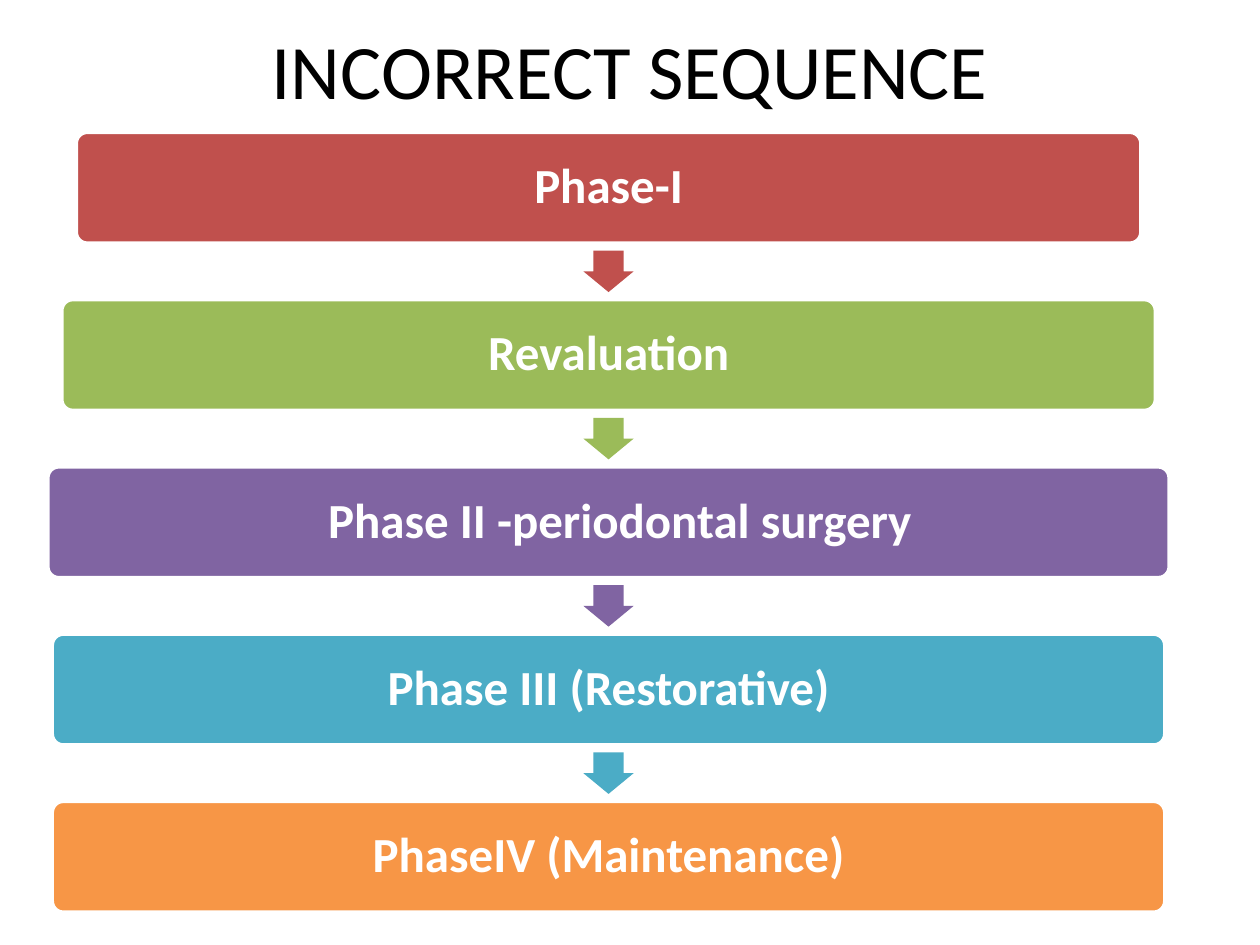
from pptx import Presentation, util as u
from pptx.dml.color import RGBColor
from pptx.enum import shapes, text

COLOURS = {"ink": "000000", "paper": "FFFFFF", "red": "C0504D", "green": "9BBB59",
           "purple": "8064A2", "teal": "4BACC6", "orange": "F79646"}
PHASES = [("Phase-I", "red", 8.45, 0),
          ("Revaluation", "green", 8.68, 0),
          ("Phase II -periodontal surgery", "purple", 8.9, 0.18),
          ("Phase III (Restorative)", "teal", 8.83, 0),
          ("PhaseIV (Maintenance)", "orange", 8.83, 0)]
AXIS, FIRST_ROW, LAST_ROW = 4.83, 1.05, 6.36
ROW = (LAST_ROW - FIRST_ROW) / (len(PHASES) - 1)
BAR_HEIGHT, ARROW_WIDTH, ARROW_HEIGHT = 0.88, 0.4, 0.33


class SequenceSlide:
    """Holds the style and the current slide, and draws its title, bars and arrows."""

    def __init__(self, deck):
        self.slide = deck.slides.add_slide(deck.slide_layouts[5])
        self.title_format = {"name": "Calibri", "size": u.Pt(44), "bold": False}
        self.bar_format = {"name": "Calibri", "size": u.Pt(28), "bold": True}

    def colour(self, name):
        return RGBColor.from_string(COLOURS[name])

    def apply(self, target, values):
        for key, value in values.items():
            setattr(target, key, value)

    def label(self, frame, words, font, ink, inset=0.1, indent=0, spacing=1):
        self.apply(frame, {"word_wrap": True, "vertical_anchor": text.MSO_ANCHOR.MIDDLE,
                           "margin_left": u.Inches(inset + indent),
                           "margin_right": u.Inches(inset),
                           "margin_top": u.Inches(inset), "margin_bottom": u.Inches(inset)})
        line = frame.paragraphs[0]
        line.text = words
        self.apply(line, {"alignment": text.PP_ALIGN.CENTER, "line_spacing": spacing})
        self.apply(line.font, font)
        line.font.color.rgb = self.colour(ink)

    def title(self, words):
        heading = self.slide.shapes.title
        self.apply(heading, {"left": u.Inches(0.5), "top": u.Inches(-0.08),
                             "width": u.Inches(9), "height": u.Inches(1.25)})
        self.label(heading.text_frame, words, self.title_format, "ink", inset=0.05)

    def centred(self, kind, top, width, height, fill, adjustments):
        block = self.slide.shapes.add_shape(
            kind, u.Inches(AXIS - width / 2), u.Inches(top), u.Inches(width), u.Inches(height))
        for index, value in enumerate(adjustments):
            block.adjustments[index] = value
        block.shadow.inherit = False
        block.fill.solid()
        block.fill.fore_color.rgb = self.colour(fill)
        return block

    def bar(self, row, words, fill, width, indent):
        phase = self.centred(shapes.MSO_SHAPE.ROUNDED_RECTANGLE, FIRST_ROW + row * ROW,
                             width, BAR_HEIGHT, fill, [0.1])
        phase.line.color.rgb = self.colour("paper")
        phase.line.width = u.Pt(2)
        self.label(phase.text_frame, words, self.bar_format, "paper", 0.12, indent, 0.9)

    def arrow(self, row, fill):
        gap = ROW - BAR_HEIGHT
        top = FIRST_ROW + row * ROW + BAR_HEIGHT + (gap - ARROW_HEIGHT) / 2
        step = self.centred(shapes.MSO_SHAPE.DOWN_ARROW, top, ARROW_WIDTH, ARROW_HEIGHT,
                            fill, [0.6, 0.5])
        step.line.fill.background()


def main():
    deck = Presentation()
    deck.slide_width, deck.slide_height = u.Inches(10), u.Inches(7.5)
    sequence = SequenceSlide(deck)
    sequence.title("INCORRECT SEQUENCE")
    for row, (words, fill, width, indent) in enumerate(PHASES):
        sequence.bar(row, words, fill, width, indent)
        if row < len(PHASES) - 1:
            sequence.arrow(row, fill)
    deck.save("out.pptx")


if __name__ == "__main__":
    main()
